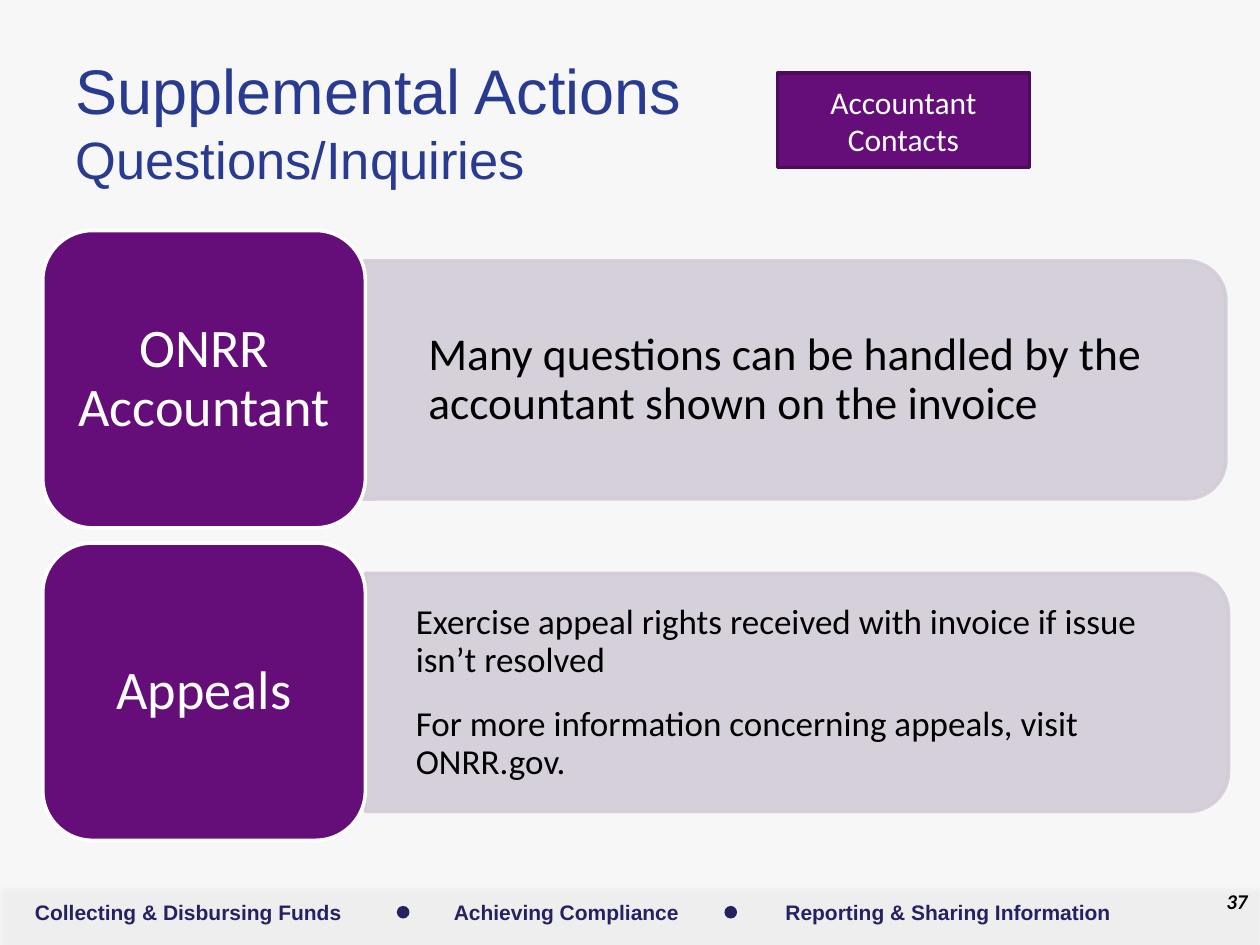
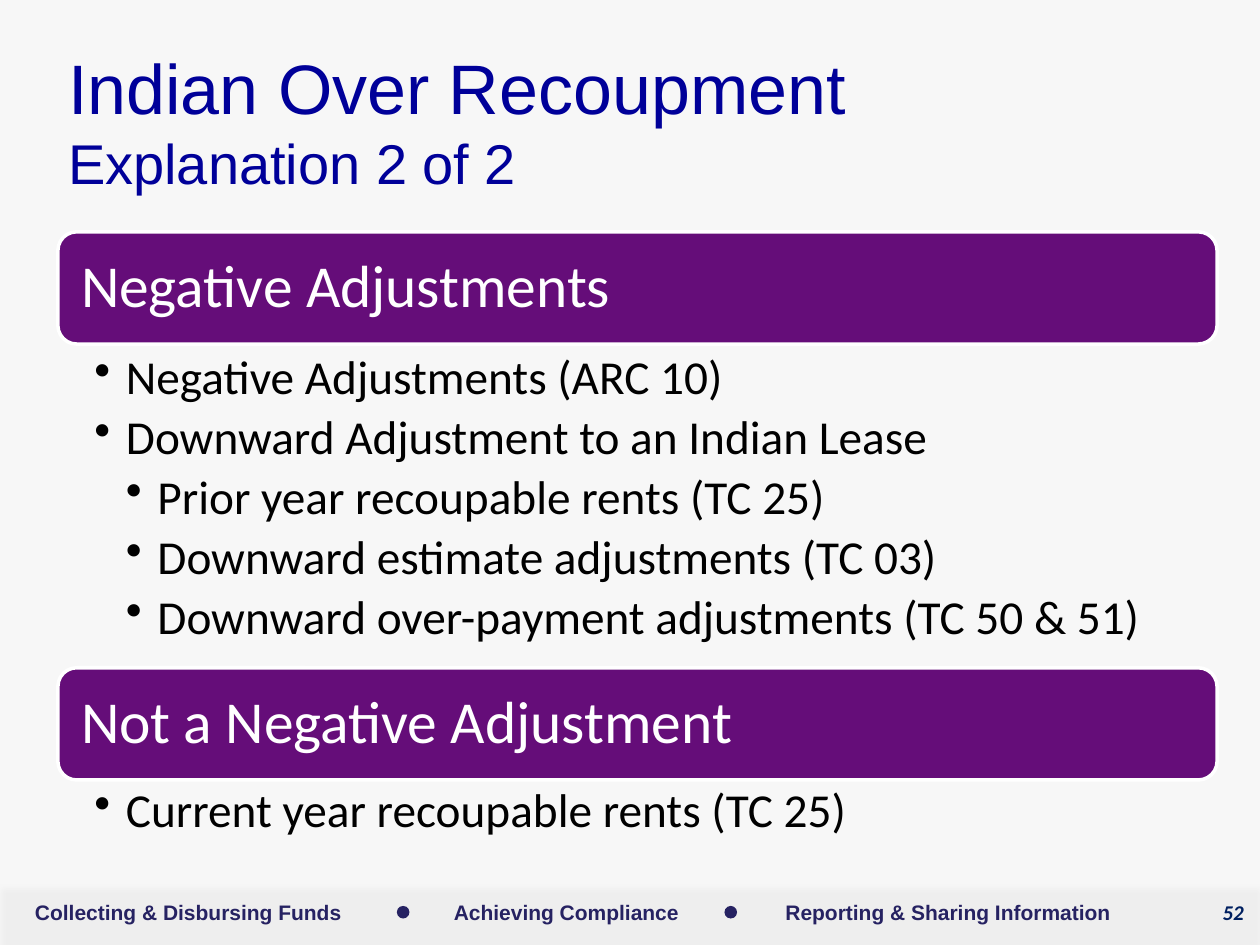
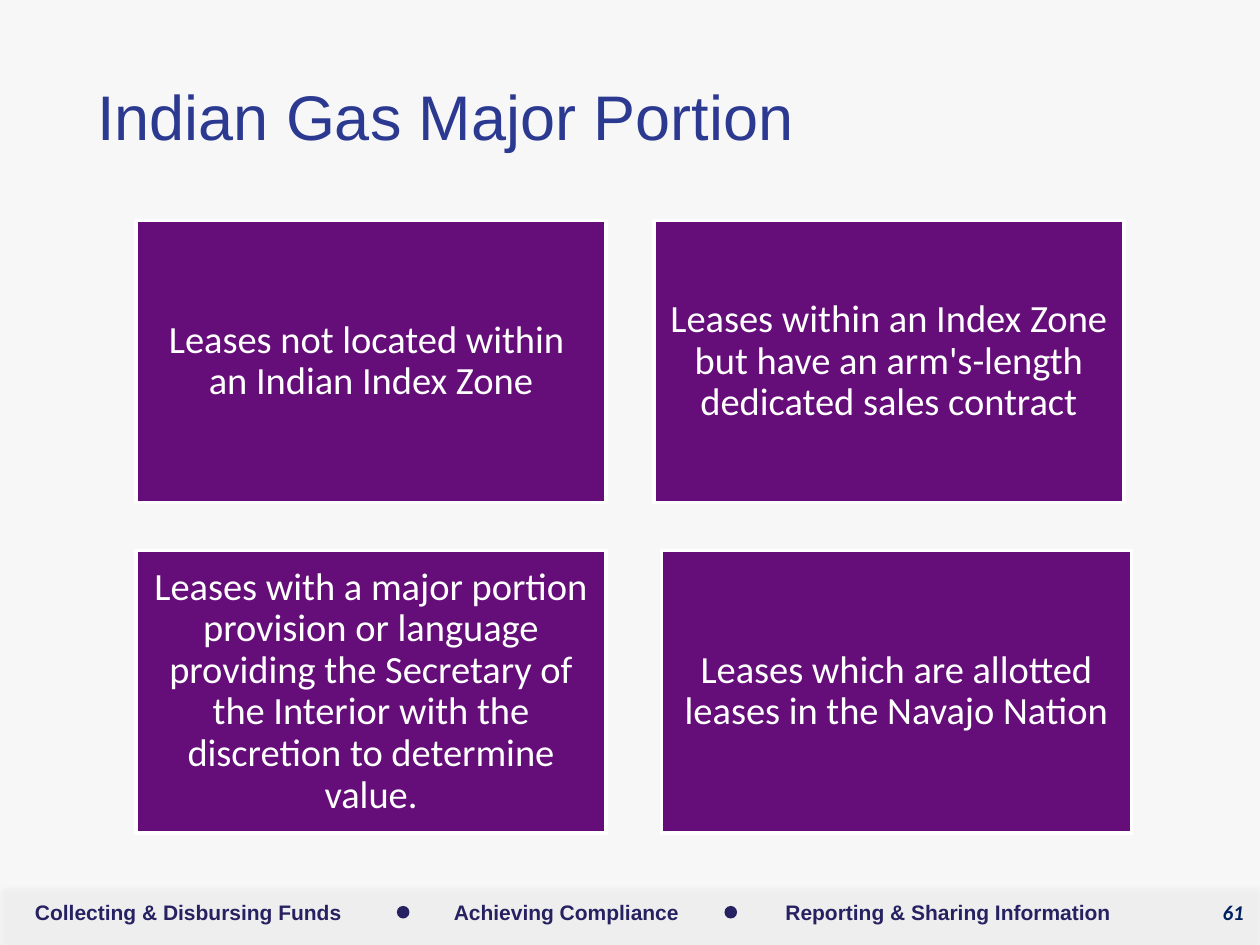
from lxml import etree
from pptx import Presentation
from pptx import util as u
from pptx.dml.color import RGBColor
from pptx.enum import shapes, text
from pptx.oxml.ns import qn

MID, TOP = text.MSO_ANCHOR.MIDDLE, text.MSO_ANCHOR.TOP
LEFT, CENTER, RIGHT = text.PP_ALIGN.LEFT, text.PP_ALIGN.CENTER, text.PP_ALIGN.RIGHT
KIND = shapes.MSO_SHAPE

# Palette
PURPLE, DARK_PURPLE, MAUVE = "650D79", "4B0A5A", "D3CCD7"
PAPER, WHITE, BLACK, INDIGO, NAVY = "F7F7F7", "FFFFFF", "000000", "262262", "002060"

# Shared footer: text, left, width
FOOTER_LABELS = [
    ("Collecting & Disbursing Funds", 0.07, 2.85),
    ("Achieving Compliance", 3.47, 2.05),
    ("Reporting & Sharing Information", 6.08, 2.89),
]
FOOTER_DOTS = [3.15, 5.75]


def color(value):
    return RGBColor.from_string(value)


def assign(target, values):
    for name, value in values.items():
        setattr(target, name, value)


def inches(values):
    return [u.Inches(value) for value in values]


def set_opacity(box, percent):
    for tint in box.element.spPr.iter(qn("a:srgbClr")):
        etree.SubElement(tint, qn("a:alpha"), val=str(percent * 1000))


def add_soft_shadow(box):
    effects = box.element.spPr.find(qn("a:effectLst"))
    shadow = etree.SubElement(effects, qn("a:outerShdw"), blurRad=str(u.Pt(4)),
                              dist=str(u.Pt(3)), dir="5400000", rotWithShape="0")
    tint = etree.SubElement(shadow, qn("a:srgbClr"), val=BLACK)
    etree.SubElement(tint, qn("a:alpha"), val="40000")


class Slides:
    """Holds the shared style and the page being drawn."""

    def __init__(self):
        self.deck = Presentation()
        assign(self.deck, {"slide_width": u.Inches(10), "slide_height": u.Inches(7.5)})
        background = self.deck.slide_master.background.fill
        background.solid()
        background.fore_color.rgb = color(PAPER)
        self.page = None

    def start(self, number, number_at, number_tint=NAVY):
        self.page = self.deck.slides.add_slide(self.deck.slide_layouts[5])
        band = self.shape(KIND.RECTANGLE, (0, 7, 10, 0.5), WHITE)
        set_opacity(band, 10)
        add_soft_shadow(band)
        for label, left, width in FOOTER_LABELS:
            self.text((left, 7.09, width, 0.3), [label], 12, INDIGO,
                      face="Arial", align=CENTER, bold=True)
        for left in FOOTER_DOTS:
            self.shape(KIND.OVAL, (left, 7.19, 0.1, 0.1), INDIGO)
        self.text(number_at, [number], 12, number_tint, align=RIGHT,
                  anchor=TOP, bold=True, italic=True)

    def title(self, at, lines, tint):
        """Lines are (words, size) pairs in one paragraph."""
        box = self.page.shapes.title
        assign(box, dict(zip(("left", "top", "width", "height"), inches(at))))
        assign(box.text_frame, {"vertical_anchor": MID, "word_wrap": True,
                                "auto_size": text.MSO_AUTO_SIZE.NONE})
        para = box.text_frame.paragraphs[0]
        para.alignment = LEFT
        for index, (words, size) in enumerate(lines):
            if index:
                para.add_line_break()
            span = para.add_run()
            span.text = words
            assign(span.font, {"name": "Arial", "size": u.Pt(size)})
            span.font.color.rgb = color(tint)

    def shape(self, kind, at, fill, line=None):
        box = self.page.shapes.add_shape(kind, *inches(at))
        box.shadow.inherit = False
        box.fill.solid()
        box.fill.fore_color.rgb = color(fill)
        if line:
            box.line.color.rgb = color(line)
            box.line.width = u.Pt(2)
        else:
            box.line.fill.background()
        return box

    def text(self, at, lines, size, tint, **style):
        box = self.page.shapes.add_textbox(*inches(at))
        self.fill_text(box, lines, size, tint, **style)

    def fill_text(self, box, lines, size, tint, face="Calibri", align=LEFT, anchor=MID,
                  inset=(0.1, 0.05, 0.1, 0.05), spacing=1, after=0, bullet=False,
                  bold=False, italic=False):
        """Lines are words, or (words, level) pairs when bulleted."""
        frame = box.text_frame
        assign(frame, {"word_wrap": True, "vertical_anchor": anchor})
        sides = ("margin_left", "margin_top", "margin_right", "margin_bottom")
        assign(frame, dict(zip(sides, inches(inset))))
        for index, line in enumerate(lines):
            para = frame.add_paragraph() if index else frame.paragraphs[0]
            words, level = line if bullet else (line, 0)
            if bullet:
                layout = para._p.get_or_add_pPr()
                layout.set("marL", str(u.Inches(0.25 * level)))
                layout.set("indent", str(u.Inches(-0.25)))
                etree.SubElement(layout, qn("a:buChar"), char="•")
            assign(para, {"alignment": align, "line_spacing": spacing,
                          "space_after": u.Pt(after), "level": level})
            span = para.add_run()
            span.text = words
            assign(span.font, {"name": face, "size": u.Pt(size),
                               "bold": bold, "italic": italic})
            span.font.color.rgb = color(tint)

    def panel(self, kind, at, lines, size, line=WHITE, **style):
        """Purple shape with white text."""
        box = self.shape(kind, at, PURPLE, line)
        self.fill_text(box, lines, size, WHITE, **style)

    def tab_panel(self, left, top, width, height):
        """Mauve panel with rounded right corners: a turned top-rounded rectangle."""
        turned = (left + (width - height) / 2, top + (height - width) / 2, height, width)
        box = self.shape(KIND.ROUND_2_SAME_RECTANGLE, turned, MAUVE, MAUVE)
        box.rotation = 90
        set_opacity(box, 90)


def questions_slide(slides):
    slides.start("37", (9.44, 7, 0.56, 0.5), BLACK)
    slides.title((0.5, 0.42, 5.33, 1.08),
                 [("Supplemental Actions", 36), ("Questions/Inquiries", 30)], "283B91")
    slides.panel(KIND.ACTION_BUTTON_CUSTOM, (6.17, 0.58, 2, 0.75),
                 ["Accountant", "Contacts"], 18, line=DARK_PURPLE, align=CENTER)
    # Rows: heading, top, panel left, text indent, text size, details
    rows = [
        ("ONRR Accountant", 1.83, 2.88, 0.25, 26,
         ["Many questions can be handled by the accountant shown on the invoice"]),
        ("Appeals", 4.31, 2.9, 0.13, 20,
         ["Exercise appeal rights received with invoice if issue isn’t resolved",
          "For more information concerning appeals, visit ONRR.gov."]),
    ]
    for heading, top, left, indent, size, details in rows:
        slides.tab_panel(left, top + 0.24, 6.85, 1.89)
        slides.text((left, top + 0.34, 6.76, 1.7), details, size, BLACK,
                    inset=(0.27 + indent, 0.14, 0.27, 0.14), spacing=0.9,
                    after=15 if len(details) > 1 else 0)
        slides.panel(KIND.ROUNDED_RECTANGLE, (0.34, top, 2.56, 2.36), [heading], 31,
                     align=CENTER, inset=(0.13, 0.06, 0.13, 0.06), spacing=0.9)


def recoupment_slide(slides):
    slides.start("52", (9.45, 7.09, 0.52, 0.4))
    slides.title((0.44, 0.33, 9, 1.25),
                 [("Indian Over Recoupment", 40), ("Explanation 2 of 2", 32)], "000099")
    # Sections: heading, top, list top, list height, (item, level)
    sections = [
        ("Negative Adjustments", 1.84, 2.76, 2.54,
         [("Negative Adjustments (ARC 10)", 1),
          ("Downward Adjustment to an Indian Lease", 1),
          ("Prior year recoupable rents (TC 25)", 2),
          ("Downward estimate adjustments (TC 03)", 2),
          ("Downward over-payment adjustments (TC 50 & 51)", 2)]),
        ("Not a Negative Adjustment", 5.3, 6.19, 0.62,
         [("Current year recoupable rents (TC 25)", 1)]),
    ]
    for heading, top, list_top, list_height, items in sections:
        slides.panel(KIND.ROUNDED_RECTANGLE, (0.46, top, 9.2, 0.89), [heading], 34,
                     inset=[0.14] * 4, spacing=0.9)
        slides.text((0.46, list_top, 9.2, list_height), items, 27, BLACK, anchor=TOP,
                    inset=(0.29, 0.05, 0.26, 0.05), spacing=0.9, after=5, bullet=True)


def major_portion_slide(slides):
    slides.start("61", (9.45, 7.09, 0.52, 0.4))
    slides.title((0.67, 0.33, 7.67, 1.17), [("Indian Gas Major Portion", 36)], "2B3990")
    # Lease cards: left, top, lines
    cards = [
        (1.08, 1.75, ["Leases not located within ", "an Indian Index Zone"]),
        (5.19, 1.75, ["Leases within an Index Zone but have an arm's-length "
                      "dedicated sales contract"]),
        (1.08, 4.37, ["Leases with a major portion provision or language providing the "
                      "Secretary of the Interior with the discretion to determine value."]),
        (5.25, 4.37, ["Leases which are allotted leases in the Navajo Nation"]),
    ]
    for left, top, lines in cards:
        slides.panel(KIND.RECTANGLE, (left, top, 3.73, 2.24), lines, 22,
                     align=CENTER, inset=[0.09] * 4, spacing=0.9)


def main():
    slides = Slides()
    questions_slide(slides)
    recoupment_slide(slides)
    major_portion_slide(slides)
    slides.deck.save("out.pptx")


if __name__ == "__main__":
    main()
